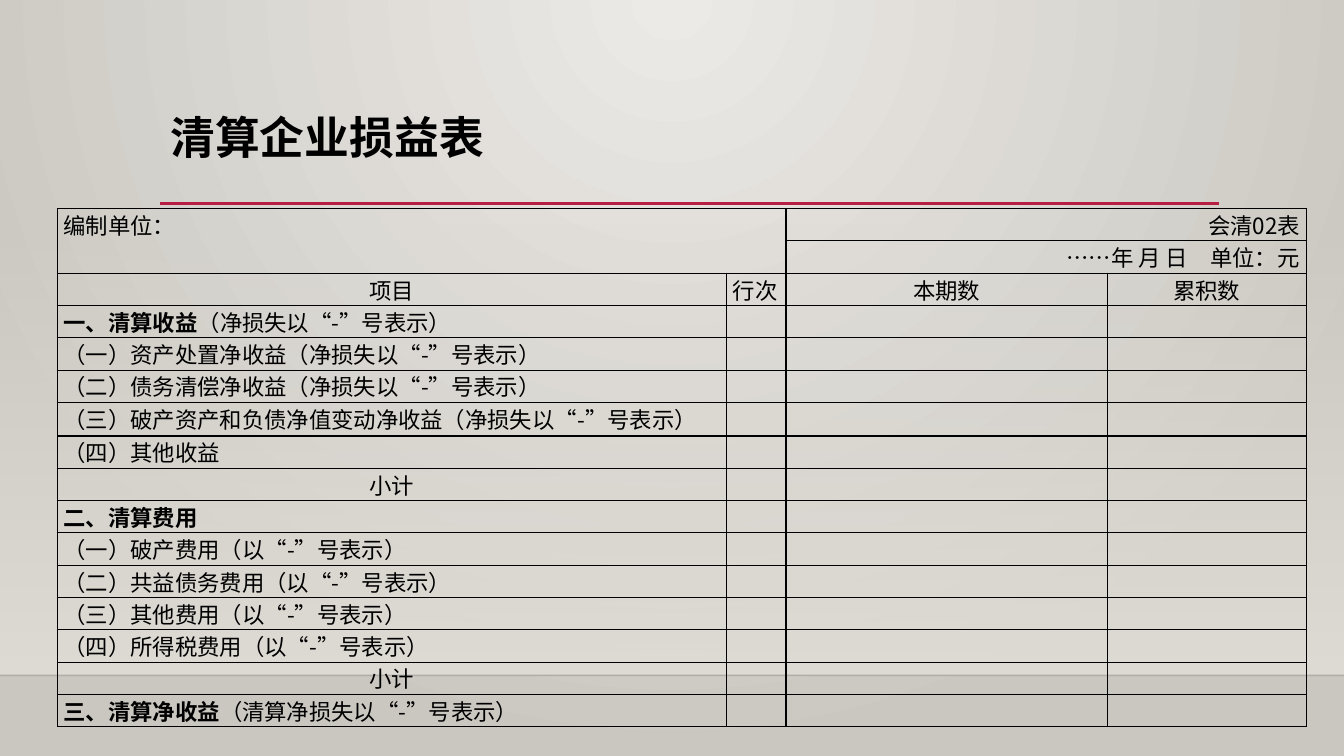
"""Build the income statement slide of an enterprise in liquidation."""
from lxml import etree
from pptx import Presentation
from pptx.dml import color as dml
from pptx.enum import lang, shapes, text
from pptx.oxml import ns
from pptx.util import Pt

FONT = "Noto Sans CJK SC"
COLORS = {
    "text": "000000",
    "border": "000000",
    "accent": "B71E42",
    "floor": "000001",
    "light": "ECEAE7",
    "dark": "CAC7C1",
    "wall": "DFDBD5",
}
ALIGN = {
    "left": text.PP_ALIGN.JUSTIFY,
    "center": text.PP_ALIGN.CENTER,
    "right": text.PP_ALIGN.RIGHT,
}
COLUMN_WIDTHS = [478, 42.5, 229.7, 141.8]
ROW_HEIGHT, TALL_ROW, TALL_HEIGHT = 20, 6, 24
HEADINGS = [("项目", "center"), ("行次", "left"), ("本期数", "center"), ("累积数", "center")]
ITEMS = [
    ("一、清算收益", "（净损失以“-”号表示）"),
    ("", "（一）资产处置净收益（净损失以“-”号表示）"),
    ("", "（二）债务清偿净收益（净损失以“-”号表示）"),
    ("", "（三）破产资产和负债净值变动净收益（净损失以“-”号表示）"),
    ("", "（四）其他收益"),
    ("", "小计"),
    ("二、清算费用", ""),
    ("", "（一）破产费用（以“-”号表示）"),
    ("", "（二）共益债务费用（以“-”号表示）"),
    ("", "（三）其他费用（以“-”号表示）"),
    ("", "（四）所得税费用（以“-”号表示）"),
    ("", "小计"),
    ("三、清算净收益", "（清算净损失以“-”号表示）"),
]


def rgb(name):
    return dml.RGBColor.from_string(COLORS[name])


def add_child(parent, tag, **attributes):
    return etree.SubElement(parent, ns.qn(tag), **attributes)


def set_alpha(element, percent):
    add_child(next(element.iter(ns.qn("a:srgbClr"))), "a:alpha", val=str(percent * 1000))


def write(paragraph, words, size=16, bold=False, align="left"):
    paragraph.alignment = ALIGN[align]
    run = paragraph.add_run()
    run.text = words
    font = run.font
    font.size, font.bold, font.name = Pt(size), bold, FONT
    font.color.rgb = rgb("text")
    font.language_id = lang.MSO_LANGUAGE_ID.SIMPLIFIED_CHINESE
    add_child(run._r.get_or_add_rPr(), "a:ea", typeface=FONT)


def set_gradient(fill, first, last):
    fill.gradient()
    for stop, name in zip(fill.gradient_stops, (first, last)):
        stop.color.rgb = rgb(name)


def paint_background(slide):
    set_gradient(slide.background.fill, "light", "dark")
    gradient = next(slide.background._cSld.iter(ns.qn("a:gradFill")))
    gradient.remove(gradient.find(ns.qn("a:lin")))
    circle = add_child(gradient, "a:path", path="circle")
    add_child(circle, "a:fillToRect", l="43000", t="0", r="43000", b="100000")


def add_wall(slide):
    wall = slide.shapes.add_shape(
        shapes.MSO_SHAPE.RECTANGLE, Pt(0), Pt(159), Pt(960), Pt(323.4))
    wall.shadow.inherit = False
    wall.line.fill.background()
    set_gradient(wall.fill, "wall", "wall")
    wall.fill.gradient_angle = 270
    set_alpha(wall._element.spPr, 0)


def add_rule(slide, left, right, top, color, width, opacity=100):
    rule = slide.shapes.add_connector(
        shapes.MSO_CONNECTOR.STRAIGHT, Pt(left), Pt(top), Pt(right), Pt(top))
    rule.line.color.rgb = rgb(color)
    rule.line.width = Pt(width)
    if opacity < 100:
        set_alpha(rule._element.spPr, opacity)
    add_child(rule._element.spPr, "a:effectLst")


def set_title(slide, words):
    title = slide.shapes.title
    title.left, title.top, title.width, title.height = Pt(114.5), Pt(43.2), Pt(756), Pt(82.8)
    frame = title.text_frame
    frame.auto_size = text.MSO_AUTO_SIZE.NONE
    frame.vertical_anchor = text.MSO_ANCHOR.BOTTOM
    frame.margin_bottom = Pt(8.6)
    paragraph = frame.paragraphs[0]
    paragraph.line_spacing = 0.9
    write(paragraph, words, size=32, bold=True)


def format_cell(cell):
    cell.margin_left = cell.margin_right = Pt(4.5)
    cell.margin_top = cell.margin_bottom = Pt(0)
    properties = cell._tc.get_or_add_tcPr()
    for side in ("a:lnL", "a:lnR", "a:lnT", "a:lnB"):
        border = add_child(properties, side, w=str(Pt(1)))
        add_child(add_child(border, "a:solidFill"), "a:srgbClr", val=COLORS["border"])
    cell.fill.background()


def add_statement(slide):
    rows = 3 + len(ITEMS)
    frame = slide.shapes.add_table(
        rows, len(COLUMN_WIDTHS), Pt(41), Pt(149), Pt(sum(COLUMN_WIDTHS)), Pt(rows * ROW_HEIGHT))
    table = frame.table
    table.first_row = table.horz_banding = False
    for column, width in zip(table.columns, COLUMN_WIDTHS):
        column.width = Pt(width)
    for index, row in enumerate(table.rows):
        row.height = Pt(TALL_HEIGHT if index == TALL_ROW else ROW_HEIGHT)
    for cell in table.iter_cells():
        format_cell(cell)
    for first, last in (((0, 0), (1, 1)), ((0, 2), (0, 3)), ((1, 2), (1, 3))):
        table.cell(*first).merge(table.cell(*last))

    def fill_cell(row, column, words, **style):
        write(table.cell(row, column).text_frame.paragraphs[0], words, **style)

    fill_cell(0, 0, "编制单位：")
    fill_cell(0, 2, "会清02表", align="right")
    fill_cell(1, 2, "……年 月 日　单位：元", align="right")
    for column, (heading, align) in enumerate(HEADINGS):
        fill_cell(2, column, heading, align=align)
    for row, (section, detail) in enumerate(ITEMS, start=3):
        if section:
            fill_cell(row, 0, section, bold=True)
        if detail:
            fill_cell(row, 0, detail, align="center" if detail == "小计" else "left")


def main():
    presentation = Presentation()
    presentation.slide_width, presentation.slide_height = Pt(960), Pt(540)
    slide = presentation.slides.add_slide(presentation.slide_layouts.get_by_name("Title Only"))
    paint_background(slide)
    add_wall(slide)
    add_rule(slide, 0, 960, 482.4, "floor", 1, opacity=20)
    add_rule(slide, 114.5, 871, 145.4, "accent", 2.5)
    set_title(slide, "清算企业损益表")
    add_statement(slide)
    presentation.save("out.pptx")


if __name__ == "__main__":
    main()
